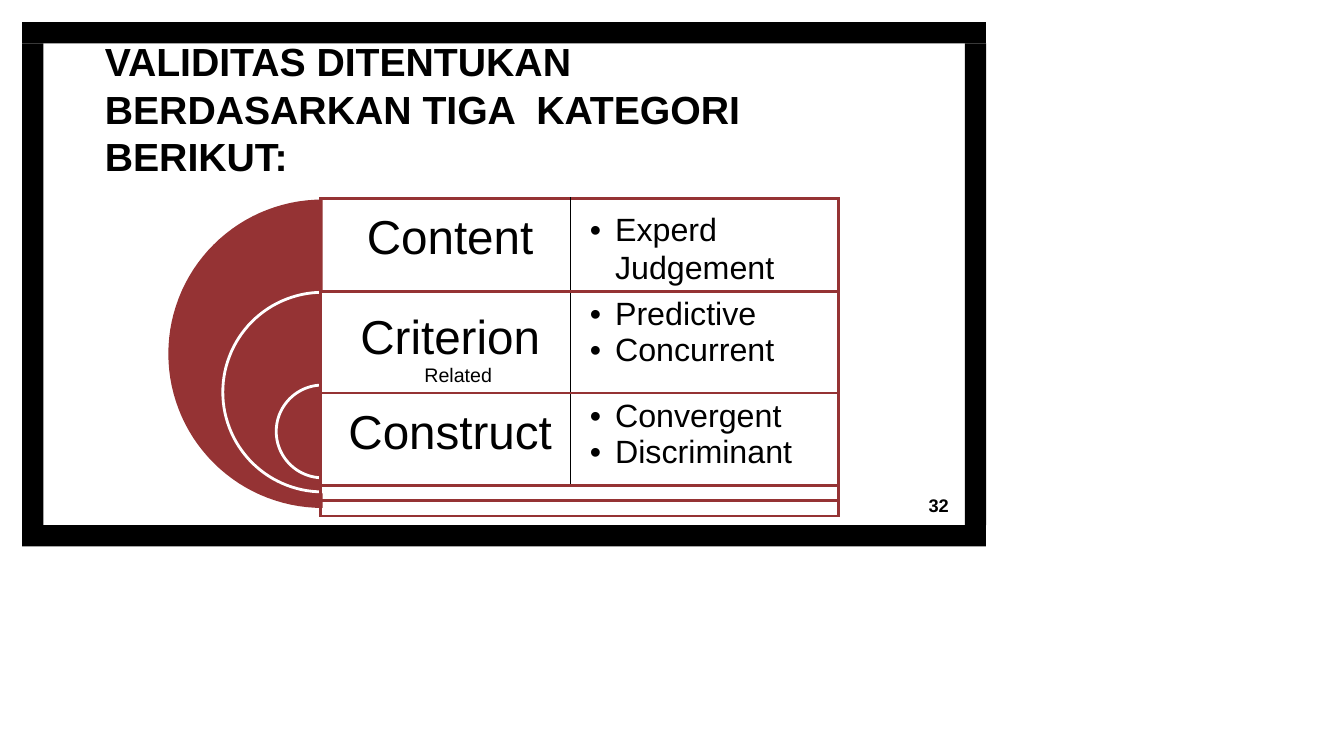
from dataclasses import dataclass
from math import cos, pi, sin

from lxml.etree import SubElement
from pptx import Presentation
from pptx.dml.color import RGBColor
from pptx.enum.shapes import MSO_SHAPE
from pptx.enum.text import MSO_ANCHOR, PP_ALIGN
from pptx.oxml import parse_xml
from pptx.oxml.ns import nsdecls, qn
from pptx.util import Inches, Pt


@dataclass(frozen=True)
class Theme:
    font: str = "Arial"
    black: str = "000000"
    white: str = "FFFFFF"
    red: str = "953334"
    title: float = 28
    number: float = 13
    category: float = 34
    detail: float = 23
    note: float = 14
    empty: float = 1
    rule: float = 2.25
    divider: float = 1
    arc: float = 2


THEME = Theme()

# Each row: category lines as (text, size, indent, line spacing), details, detail spacing, detail top inset
CATEGORIES = [
    ([("Content", THEME.category, 0.09, 1.0)], ["Experd Judgement"], 1.03, 0.13),
    ([("Criterion", THEME.category, 0.09, 1.13), ("Related", THEME.note, 0.25, 1.02)],
     ["Predictive", "Concurrent"], 1.0, 0.05),
    ([("Construct", THEME.category, 0.09, 1.0)], ["Convergent", "Discriminant"], 1.0, 0.05),
]
ROW_HEIGHTS = [0.92, 0.92, 0.92, 0.15, 0.15]
COLUMN_WIDTHS = [2.48, 2.66]


def apply_format(target, values):
    for name, value in values.items():
        setattr(target, name, value)


def write(paragraph, text, size, bold=False):
    run = paragraph.add_run()
    run.text = text
    apply_format(run.font, {"name": THEME.font, "size": Pt(size), "bold": bold})
    run.font.color.rgb = RGBColor.from_string(THEME.black)


def add_label(slide, box, text, size, anchor):
    frame = slide.shapes.add_textbox(*map(Inches, box)).text_frame
    apply_format(frame, {"word_wrap": True, "vertical_anchor": anchor, "margin_left": 0,
                         "margin_right": 0, "margin_top": Inches(0.01), "margin_bottom": 0})
    write(frame.paragraphs[0], text, size, bold=True)


def paint(shape, color):
    shape.shadow.inherit = False
    shape.fill.solid()
    shape.fill.fore_color.rgb = RGBColor.from_string(color)
    shape.line.fill.background()


def add_border_frame(slide, left, top, width, height, thickness):
    inner = height - 2 * thickness
    right, bottom = left + width - thickness, top + height - thickness
    for bar in [(left, bottom, width, thickness), (left, top + thickness, thickness, inner),
                (left, top, width, thickness), (right, top + thickness, thickness, inner)]:
        paint(slide.shapes.add_shape(MSO_SHAPE.RECTANGLE, *map(Inches, bar)), THEME.black)


def add_half_discs(slide, left, top, width):
    """Nested half discs that share a flat right edge."""
    edge, steps = left + width, 60
    for index, radius in enumerate([width, 0.99, 0.46]):
        middle = top + index * ROW_HEIGHTS[0] + radius
        points = [(Inches(edge - radius * sin(pi * step / steps)),
                   Inches(middle - radius * cos(pi * step / steps))) for step in range(steps + 1)]
        builder = slide.shapes.build_freeform(*points[0])
        builder.add_line_segments(points[1:], close=True)
        disc = builder.convert_to_shape()
        paint(disc, THEME.red)
        if index:
            disc.line.color.rgb = RGBColor.from_string(THEME.white)
            disc.line.width = Pt(THEME.arc)


def style_cell(cell, top_inset, left, right):
    """Clear the cell and draw its borders; left and right are (colour, points)."""
    apply_format(cell, {"margin_left": 0, "margin_right": 0, "margin_bottom": 0,
                        "margin_top": Inches(top_inset)})
    cell.fill.background()
    rule = (THEME.red, THEME.rule)
    borders = {"lnL": left, "lnR": right, "lnT": rule, "lnB": rule}
    properties = cell._tc.get_or_add_tcPr()
    for position, (tag, (color, points)) in enumerate(borders.items()):
        properties.insert(position, parse_xml(
            f'<a:{tag} {nsdecls("a")} w="{Pt(points)}"><a:solidFill>'
            f'<a:srgbClr val="{color}"/></a:solidFill></a:{tag}>'))


def fill_paragraphs(cell, count):
    frame = cell.text_frame
    return [frame.paragraphs[0]] + [frame.add_paragraph() for _ in range(count - 1)]


def fill_category(cell, lines):
    for paragraph, (text, size, indent, spacing) in zip(fill_paragraphs(cell, len(lines)), lines):
        paragraph._p.get_or_add_pPr().set("marL", str(Inches(indent)))
        apply_format(paragraph, {"alignment": PP_ALIGN.CENTER, "line_spacing": spacing})
        write(paragraph, text, size)


def fill_details(cell, details, spacing):
    for paragraph, text in zip(fill_paragraphs(cell, len(details)), details):
        paragraph.line_spacing = spacing
        properties = paragraph._p.get_or_add_pPr()
        properties.set("marL", str(Inches(0.44)))
        properties.set("indent", str(Inches(-0.25)))
        SubElement(properties, qn("a:buFont"), typeface=THEME.font)
        SubElement(properties, qn("a:buChar"), char="•")
        write(paragraph, text, THEME.detail)


def add_category_table(slide, left, top):
    box = (left, top, sum(COLUMN_WIDTHS), sum(ROW_HEIGHTS))
    table = slide.shapes.add_table(len(ROW_HEIGHTS), len(COLUMN_WIDTHS), *map(Inches, box)).table
    apply_format(table, {"first_row": False, "horz_banding": False})
    for column, width in zip(table.columns, COLUMN_WIDTHS):
        column.width = Inches(width)
    for row, height in zip(table.rows, ROW_HEIGHTS):
        row.height = Inches(height)

    rule, divider = (THEME.red, THEME.rule), (THEME.black, THEME.divider)
    for index, (lines, details, spacing, inset) in enumerate(CATEGORIES):
        category, detail = table.cell(index, 0), table.cell(index, 1)
        style_cell(category, 0.13, rule, divider)
        style_cell(detail, inset, divider, rule)
        fill_category(category, lines)
        fill_details(detail, details, spacing)

    # Thin closing rows without text
    for index in range(len(CATEGORIES), len(ROW_HEIGHTS)):
        table.cell(index, 0).merge(table.cell(index, 1))
        for cell in table.rows[index].cells:
            style_cell(cell, 0, rule, rule)
            SubElement(cell.text_frame.paragraphs[0]._p, qn("a:endParaRPr"),
                       sz=str(int(THEME.empty * 100)))


def main():
    presentation = Presentation()
    apply_format(presentation, {"slide_width": Inches(13.33), "slide_height": Inches(7.5)})
    slide = presentation.slides.add_slide(presentation.slide_layouts[6])
    add_border_frame(slide, 0.22, 0.22, 9.56, 5.2, 0.21)
    add_label(slide, (1.04, 0.59, 6.93, 0.96),
              "VALIDITAS DITENTUKAN BERDASARKAN TIGA  KATEGORI BERIKUT:",
              THEME.title, MSO_ANCHOR.MIDDLE)
    add_label(slide, (9.21, 4.89, 0.23, 0.24), "32", THEME.number, MSO_ANCHOR.TOP)
    add_half_discs(slide, 1.67, 1.98, 1.53)
    add_category_table(slide, 3.18, 1.97)
    presentation.save("out.pptx")


if __name__ == "__main__":
    main()
